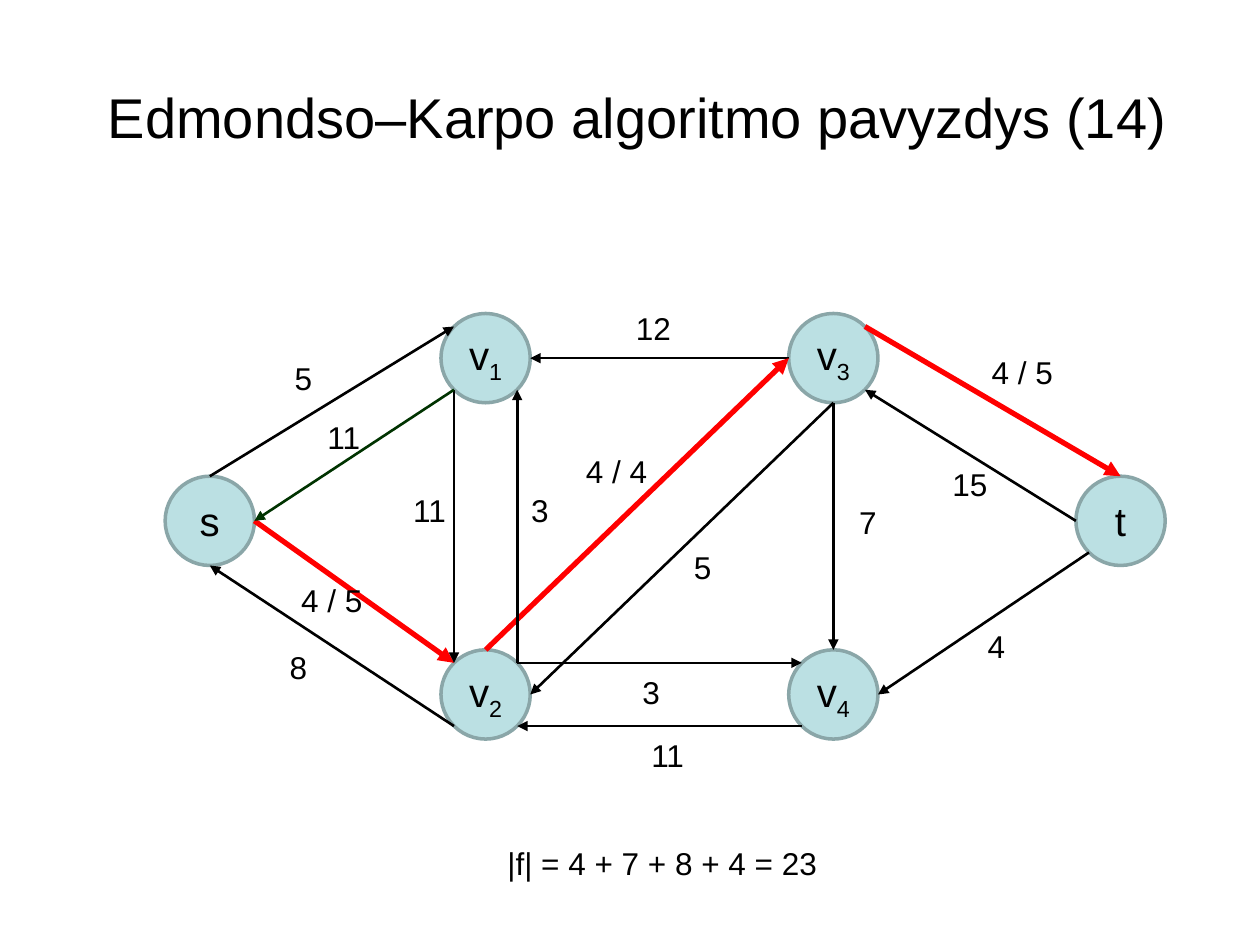
from lxml import etree
from pptx import Presentation
from pptx.dml.color import RGBColor
from pptx.enum import shapes, text
from pptx.oxml import ns
from pptx.util import Cm, Pt

COLORS = {"ink": "000000", "node": "BBE0E3", "rim": "8AA6A8",
          "path": "FF0000", "green": "003300"}
FONT = "Arial"
DIAMETER = 1.8

# Node name: (left, top) within the graph
NODES = {"v1": (5.56, 0), "v3": (12.57, 0), "v2": (5.56, 6.78),
         "v4": (12.57, 6.78), "s": (0, 3.28), "t": (18.36, 3.28)}

# Compass points on a node, as fractions of its diameter
NEAR, FAR = 0.146, 0.854
PORTS = {"n": (0.5, 0), "s": (0.5, 1), "w": (0, 0.5), "e": (1, 0.5),
         "nw": (NEAR, NEAR), "ne": (FAR, NEAR),
         "sw": (NEAR, FAR), "se": (FAR, FAR)}

# Start, its port, end, its port, colour, label, label (left, top)
EDGES = [
    ("s", "n", "v1", "nw", "ink", "5", (2.36, 0.79)),
    ("v3", "w", "v1", "e", "ink", "12", (9.24, -0.22)),
    ("s", "e", "v2", "nw", "path", "4 / 5", (2.49, 5.26)),
    ("v2", "ne", "v4", "nw", "ink", "3", (9.37, 7.12)),
    ("v2", "n", "v3", "w", "path", "4 / 4", (8.23, 2.67)),
    ("v1", "sw", "v2", "nw", "ink", "11", (4.75, 3.46)),
    ("v2", "ne", "v1", "se", "ink", "3", (7.13, 3.46)),
    ("v3", "s", "v4", "n", "ink", "7", (13.74, 3.69)),
    ("v3", "ne", "t", "n", "path", "4 / 5", (16.41, 0.67)),
    ("t", "sw", "v4", "e", "ink", "4", (16.33, 6.2)),
    ("v1", "sw", "s", "e", "green", "11", (3.02, 1.99)),
    ("v3", "s", "v2", "e", "ink", "5", (10.41, 4.6)),
    ("v4", "sw", "v2", "se", "ink", "11", (9.55, 8.39)),
    ("t", "w", "v3", "se", "ink", "15", (15.62, 2.93)),
    ("v2", "sw", "s", "s", "ink", "8", (2.26, 6.61)),
]
# Label width by number of characters
LABEL_WIDTHS = {1: 0.88, 2: 1.25, 5: 1.77}


def color(name):
    return RGBColor.from_string(COLORS[name])


def add_run(paragraph, words, size):
    run = paragraph.add_run()
    run.text = words
    run.font.size = Pt(size)
    run.font.name = FONT
    run.font.color.rgb = color("ink")
    return run


def add_words(slide, left, top, width, height, words, size=18):
    box = slide.shapes.add_textbox(Cm(left), Cm(top), Cm(width), Cm(height))
    box.text_frame.word_wrap = False
    add_run(box.text_frame.paragraphs[0], words, size)
    return box.text_frame


def add_title(slide, left, top, width, height):
    frame = add_words(slide, left, top, width, height,
                      " Edmondso–Karpo algoritmo pavyzdys (14)", 32)
    frame.word_wrap = True
    frame.vertical_anchor = text.MSO_ANCHOR.MIDDLE
    frame.paragraphs[0].alignment = text.PP_ALIGN.CENTER


def add_node(slide, left, top, name):
    node = slide.shapes.add_shape(shapes.MSO_SHAPE.OVAL, Cm(left), Cm(top),
                                  Cm(DIAMETER), Cm(DIAMETER))
    node.shadow.inherit = False
    node.fill.solid()
    node.fill.fore_color.rgb = color("node")
    node.line.color.rgb = color("rim")
    node.line.width = Pt(2)
    frame = node.text_frame
    frame.margin_left = frame.margin_right = 0
    frame.margin_top = frame.margin_bottom = 0
    frame.vertical_anchor = text.MSO_ANCHOR.MIDDLE
    paragraph = frame.paragraphs[0]
    paragraph.alignment = text.PP_ALIGN.CENTER
    add_run(paragraph, name[0], 23)
    if name[1:]:
        index = add_run(paragraph, name[1:], 23)
        index.font._element.set("baseline", "-25000")


def add_arrow(slide, start, end, shade):
    arrow = slide.shapes.add_connector(
        shapes.MSO_CONNECTOR.STRAIGHT, *(Cm(value) for value in start + end))
    arrow.line.color.rgb = color(shade)
    arrow.line.width = Pt(3 if shade == "path" else 1.5)
    properties = arrow._element.spPr
    tip = etree.SubElement(properties.find(ns.qn("a:ln")), ns.qn("a:tailEnd"))
    tip.set("type", "triangle")
    etree.SubElement(properties, ns.qn("a:effectLst"))


def add_graph(slide, left, top):
    def port(name, side):
        (x, y), (across, down) = NODES[name], PORTS[side]
        return left + x + across * DIAMETER, top + y + down * DIAMETER

    for name, (x, y) in NODES.items():
        add_node(slide, left + x, top + y, name)
    for start, leave, end, arrive, shade, label, (x, y) in EDGES:
        add_arrow(slide, port(start, leave), port(end, arrive), shade)
        add_words(slide, left + x, top + y, LABEL_WIDTHS[len(label)], 1.02,
                  label)


def main():
    deck = Presentation()
    deck.slide_width, deck.slide_height = Cm(25.4), Cm(19.05)
    slide = deck.slides.add_slide(deck.slide_layouts[6])
    add_title(slide, 1.27, 0.76, 22.86, 3.18)
    add_graph(slide, 3.33, 6.32)
    # Total flow
    add_words(slide, 9.98, 16.89, 6.81, 1.02, "|f| = 4 + 7 + 8 + 4 = 23")
    deck.save("out.pptx")


if __name__ == "__main__":
    main()
